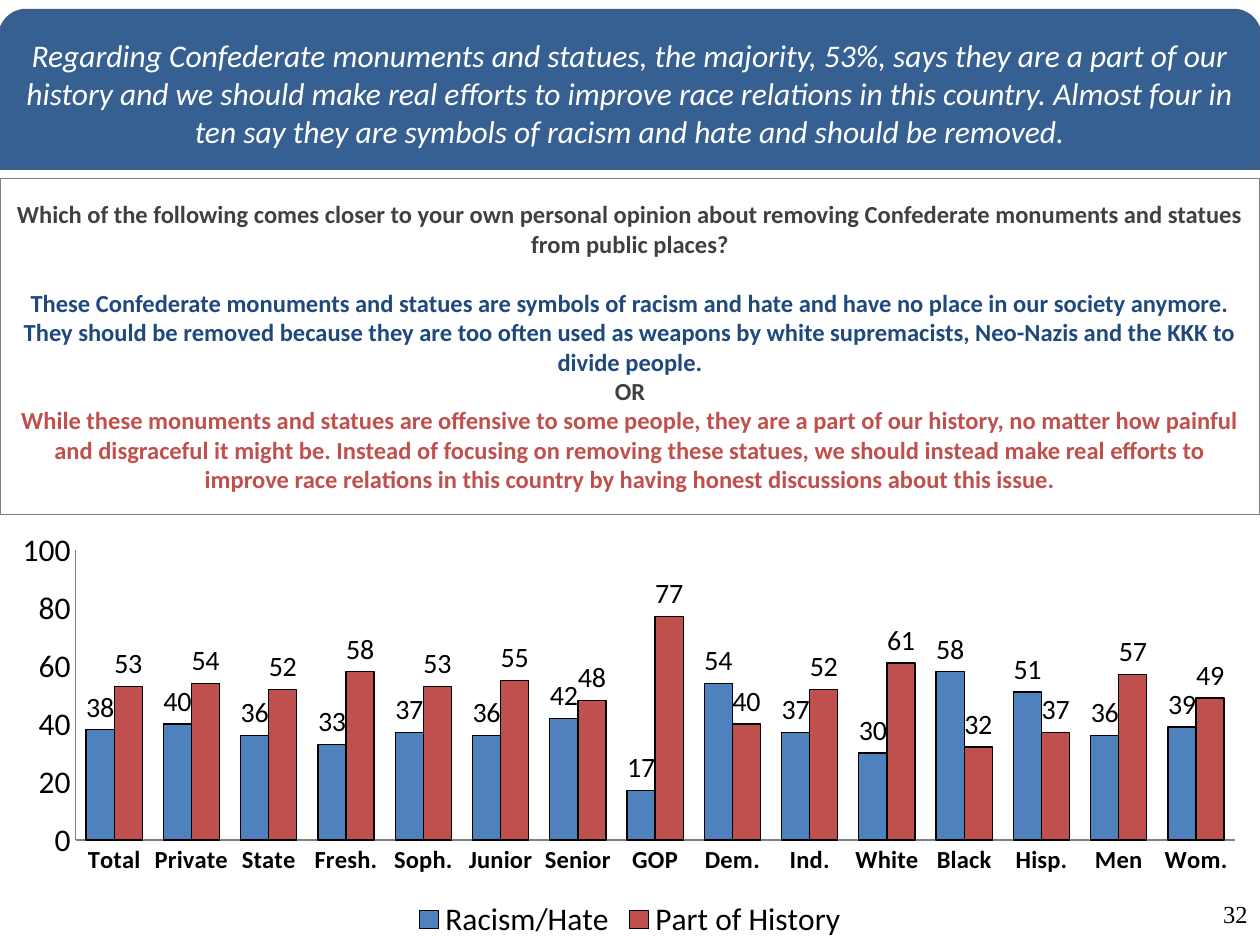
import dataclasses

import lxml.etree
import pptx
import pptx.chart.data
import pptx.dml.color
import pptx.enum.chart
import pptx.enum.shapes
import pptx.enum.text
import pptx.oxml.ns
import pptx.util

Pt = pptx.util.Pt
RGB = pptx.dml.color.RGBColor.from_string
ALIGN = pptx.enum.text.PP_ALIGN
ANCHOR = pptx.enum.text.MSO_ANCHOR


@dataclasses.dataclass(frozen=True)
class Theme:
    font: str = "Calibri"
    number_font: str = "Times New Roman"
    white: str = "FFFFFF"
    black: str = "000000"
    dark: str = "404040"
    navy: str = "1F497D"
    blue: str = "4F81BD"
    red: str = "C0504D"
    banner: str = "376092"
    banner_line: str = "3A5F8C"
    grey: str = "808080"
    large: int = 18
    label: int = 16
    body: int = 14


class Deck:
    """Builds styled elements on a grid of 120 columns by 90 rows."""

    def __init__(self, theme):
        self.t = theme
        self.prs = pptx.Presentation()
        self.prs.slide_width = pptx.util.Inches(10)
        self.prs.slide_height = pptx.util.Inches(7.5)
        self.s = self.prs.slides.add_slide(self.prs.slide_layouts[5])

    def box(self, col, row, cols, rows):
        w, h = self.prs.slide_width / 120, self.prs.slide_height / 90
        return [int(v) for v in (col * w, row * h, cols * w, rows * h)]

    def font(self, f, size, color, name=None, bold=False, italic=False):
        f.name, f.size = name or self.t.font, Pt(size)
        f.bold, f.italic = bold, italic
        f.color.rgb = RGB(color)

    def line(self, ln, color, width):
        ln.color.rgb = RGB(color)
        ln.width = Pt(width)

    def frame(self, sp, anchor):
        tf = sp.text_frame
        tf.auto_size = pptx.enum.text.MSO_AUTO_SIZE.NONE
        tf.word_wrap = True
        tf.vertical_anchor = anchor
        return tf

    def run(self, p, text, align, **style):
        p.alignment = align
        r = p.add_run()
        r.text = text
        self.font(r.font, **style)

    def question(self, grid, parts):
        sp = self.s.shapes.title
        sp.left, sp.top, sp.width, sp.height = self.box(*grid)
        self.line(sp.line, self.t.grey, 0.75)
        tf = self.frame(sp, ANCHOR.MIDDLE)
        for i, (text, color, gap) in enumerate(parts):
            p = tf.add_paragraph() if i else tf.paragraphs[0]
            p.space_before = Pt(gap)
            self.run(p, text, ALIGN.CENTER, size=self.t.body, color=color, bold=True)

    def banner(self, grid, text):
        kind = pptx.enum.shapes.MSO_SHAPE.ROUND_2_SAME_RECTANGLE
        sp = self.s.shapes.add_shape(kind, *self.box(*grid))
        sp.shadow.inherit = False
        sp.fill.solid()
        sp.fill.fore_color.rgb = RGB(self.t.banner)
        self.line(sp.line, self.t.banner_line, 2)
        p = self.frame(sp, ANCHOR.MIDDLE).paragraphs[0]
        self.run(p, text, ALIGN.CENTER, size=self.t.large, color=self.t.white, italic=True)

    def number(self, grid, text):
        sp = self.s.shapes.add_textbox(*self.box(*grid))
        p = self.frame(sp, ANCHOR.BOTTOM).paragraphs[0]
        self.run(p, text, ALIGN.RIGHT, size=self.t.body, color=self.t.black,
                 name=self.t.number_font)

    def columns(self, grid, cats, series, plot_area):
        xl = pptx.enum.chart
        data = pptx.chart.data.CategoryChartData()
        data.categories = cats
        for name, _, vals in series:
            data.add_series(name, vals)
        ch = self.s.shapes.add_chart(
            xl.XL_CHART_TYPE.COLUMN_CLUSTERED, *self.box(*grid), data).chart
        self.font(ch.font, self.t.large, self.t.black)
        ch.has_title = False
        ch.has_legend = True
        ch.legend.position = xl.XL_LEGEND_POSITION.BOTTOM
        ch.legend.include_in_layout = False
        self.font(ch.legend.font, self.t.large, self.t.black)

        va, ca = ch.value_axis, ch.category_axis
        va.minimum_scale, va.maximum_scale, va.major_unit = 0, 100, 20
        for ax, size, bold in ((va, self.t.large, False), (ca, self.t.body, True)):
            ax.has_major_gridlines = False
            ax.major_tick_mark = xl.XL_TICK_MARK.NONE
            self.line(ax.format.line, self.t.grey, 0.75)
            self.font(ax.tick_labels.font, size, self.t.black, bold=bold)

        plot = ch.plots[0]
        plot.gap_width, plot.overlap = 75, 0
        plot.vary_by_categories = False
        for ser, (_, color, _) in zip(plot.series, series):
            ser.format.fill.solid()
            ser.format.fill.fore_color.rgb = RGB(color)
            self.line(ser.format.line, self.t.black, 0.75)
            labels = ser.data_labels
            labels.show_value = True
            labels.position = xl.XL_LABEL_POSITION.OUTSIDE_END
            self.font(labels.font, self.t.label, self.t.black)
        self.place_plot(ch, plot_area)

    def place_plot(self, ch, shares):
        qn = pptx.oxml.ns.qn
        area = ch._chartSpace.chart.plotArea
        for old in area.findall(qn("c:layout")):
            area.remove(old)
        layout = lxml.etree.Element(qn("c:layout"))
        area.insert(0, layout)
        manual = lxml.etree.SubElement(layout, qn("c:manualLayout"))
        settings = [("layoutTarget", "inner"), ("xMode", "edge"), ("yMode", "edge")]
        for tag, val in settings + list(zip("xywh", shares)):
            lxml.etree.SubElement(manual, qn("c:" + tag)).set("val", str(val))


def main():
    t = Theme()
    d = Deck(t)
    d.question((0, 17, 120, 32), [
        ("Which of the following comes closer to your own personal opinion about removing "
         "Confederate monuments and statues from public places?", t.dark, 0),
        ("These Confederate monuments and statues are symbols of racism and hate and have no "
         "place in our society anymore. They should be removed because they are too often used "
         "as weapons by white supremacists, Neo-Nazis and the KKK to divide people.", t.navy, 17),
        ("OR", t.dark, 0),
        ("While these monuments and statues are offensive to some people, they are a part of our "
         "history, no matter how painful and disgraceful it might be. Instead of focusing on "
         "removing these statues, we should instead make real efforts to improve race relations "
         "in this country by having honest discussions about this issue.", t.red, 0),
    ])
    d.banner((0, 1, 120, 15),
             "Regarding Confederate monuments and statues, the majority, 53%, says they are a "
             "part of our history and we should make real efforts to improve race relations in "
             "this country. Almost four in ten say they are symbols of racism and hate and "
             "should be removed.")
    cats = ["Total", "Private", "State", "Fresh.", "Soph.", "Junior", "Senior", "GOP",
            "Dem.", "Ind.", "White", "Black", "Hisp.", "Men", "Wom."]
    d.columns((0, 50, 120, 40), cats, [
        ("Racism/Hate", t.blue, [38, 40, 36, 33, 37, 36, 42, 17, 54, 37, 30, 58, 51, 36, 39]),
        ("Part of History", t.red, [53, 54, 52, 58, 53, 55, 48, 77, 40, 52, 61, 32, 37, 57, 49]),
    ], (0.06, 0.06, 0.92, 0.69))
    d.number((114.4, 82, 5.6, 7), "32")
    d.prs.save("out.pptx")


if __name__ == "__main__":
    main()
